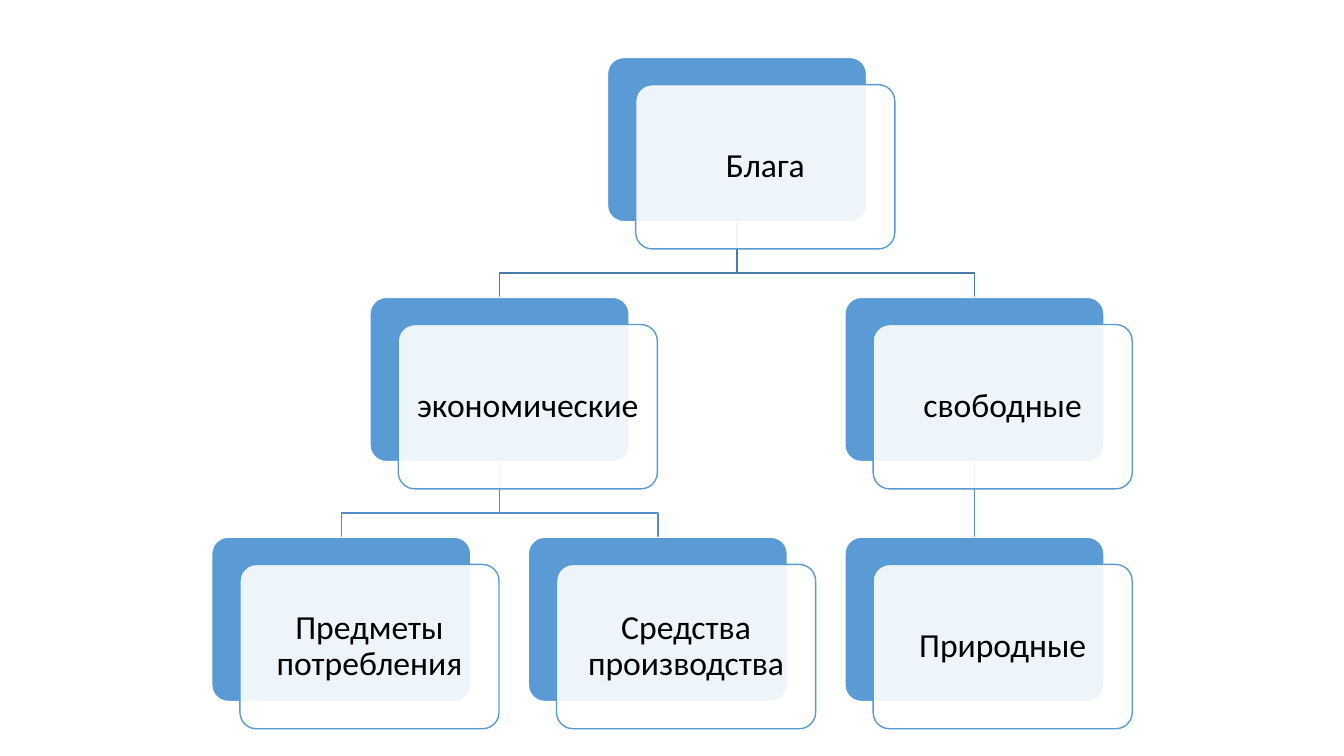
from lxml.etree import SubElement
from pptx import Presentation
from pptx.dml.color import RGBColor
from pptx.enum.shapes import MSO_CONNECTOR, MSO_SHAPE
from pptx.enum.text import MSO_ANCHOR, PP_ALIGN
from pptx.oxml.ns import qn
from pptx.util import Inches, Pt

COLORS = {"plate": "5B9BD5", "card": "FFFFFF", "text": "000000"}
BRANCH_COLORS = ["497CAB", "538DC1"]  # by level of the parent

LEFT, TOP = 2.1, 0.57
COLUMN, ROW = 3.14, 2.38
BOX_W, BOX_H = 2.57, 1.63
CARD_DX, CARD_DY = 0.28, 0.27
BEND = 0.24

TREE = ("Блага", [
    ("экономические", [("Предметы потребления", []), ("Средства производства", [])]),
    ("свободные", [("Природные", [])]),
])


def rgb(hex_color):
    return RGBColor.from_string(hex_color)


def arrange(node, level=0, first_column=0):
    """Return the node with its column and the number of leaf columns it takes."""
    label, children = node
    placed, leaves = [], 0
    for child in children:
        branch, taken = arrange(child, level + 1, first_column + leaves)
        placed.append(branch)
        leaves += taken
    column = sum(b["column"] for b in placed) / len(placed) if placed else first_column
    branch = {"label": label, "level": level, "column": column, "children": placed}
    return branch, max(leaves, 1)


def corner(branch):
    return LEFT + branch["column"] * COLUMN, TOP + branch["level"] * ROW


def draw_link(slide, parent, child):
    (parent_x, parent_y), (child_x, child_y) = corner(parent), corner(child)
    start_x, end_x = (Inches(x + BOX_W / 2) for x in (parent_x, child_x))
    start_y, bend_y, end_y = (
        Inches(y) for y in (parent_y + BOX_H, child_y - BEND, child_y))
    if start_x == end_x:
        link = slide.shapes.add_connector(
            MSO_CONNECTOR.STRAIGHT, start_x, start_y, end_x, end_y)
        SubElement(link.line._get_or_add_ln().getparent(), qn("a:effectLst"))
    else:
        outline = slide.shapes.build_freeform(start_x, start_y)
        outline.add_line_segments(
            [(start_x, bend_y), (end_x, bend_y), (end_x, end_y)], close=False)
        link = outline.convert_to_shape()
        link.fill.background()
        link.shadow.inherit = False
    link.line.color.rgb = rgb(BRANCH_COLORS[parent["level"]])
    link.line.width = Pt(1)


def draw_links(slide, branch):
    for child in branch["children"]:
        draw_link(slide, branch, child)
        draw_links(slide, child)


def add_rounded(slide, x, y, fill, line):
    box = slide.shapes.add_shape(
        MSO_SHAPE.ROUNDED_RECTANGLE, *map(Inches, (x, y, BOX_W, BOX_H)))
    box.adjustments[0] = 0.1
    box.shadow.inherit = False
    box.fill.solid()
    box.fill.fore_color.rgb = rgb(fill)
    box.line.color.rgb = rgb(line)
    box.line.width = Pt(1)
    return box


def draw_nodes(slide, branch):
    x, y = corner(branch)
    add_rounded(slide, x, y, COLORS["plate"], COLORS["card"])
    card = add_rounded(slide, x + CARD_DX, y + CARD_DY, COLORS["card"], COLORS["plate"])
    card_color = card.fill._xPr.find(qn("a:solidFill"))[0]
    SubElement(card_color, qn("a:alpha"), val="90000")

    frame = card.text_frame
    frame.word_wrap = True
    frame.vertical_anchor = MSO_ANCHOR.MIDDLE
    frame.margin_left = frame.margin_right = Inches(0.1)
    frame.margin_top = frame.margin_bottom = Inches(0.1)
    label = frame.paragraphs[0]
    label.text = branch["label"]
    label.alignment = PP_ALIGN.CENTER
    label.line_spacing = 0.9
    label.font.name = "Calibri"
    label.font.size = Pt(24)
    label.font.color.rgb = rgb(COLORS["text"])
    for child in branch["children"]:
        draw_nodes(slide, child)


def main():
    deck = Presentation()
    deck.slide_width, deck.slide_height = Inches(13.33), Inches(7.5)
    slide = deck.slides.add_slide(deck.slide_layouts[6])
    root, _ = arrange(TREE)
    draw_links(slide, root)
    draw_nodes(slide, root)
    deck.save("out.pptx")


if __name__ == "__main__":
    main()
